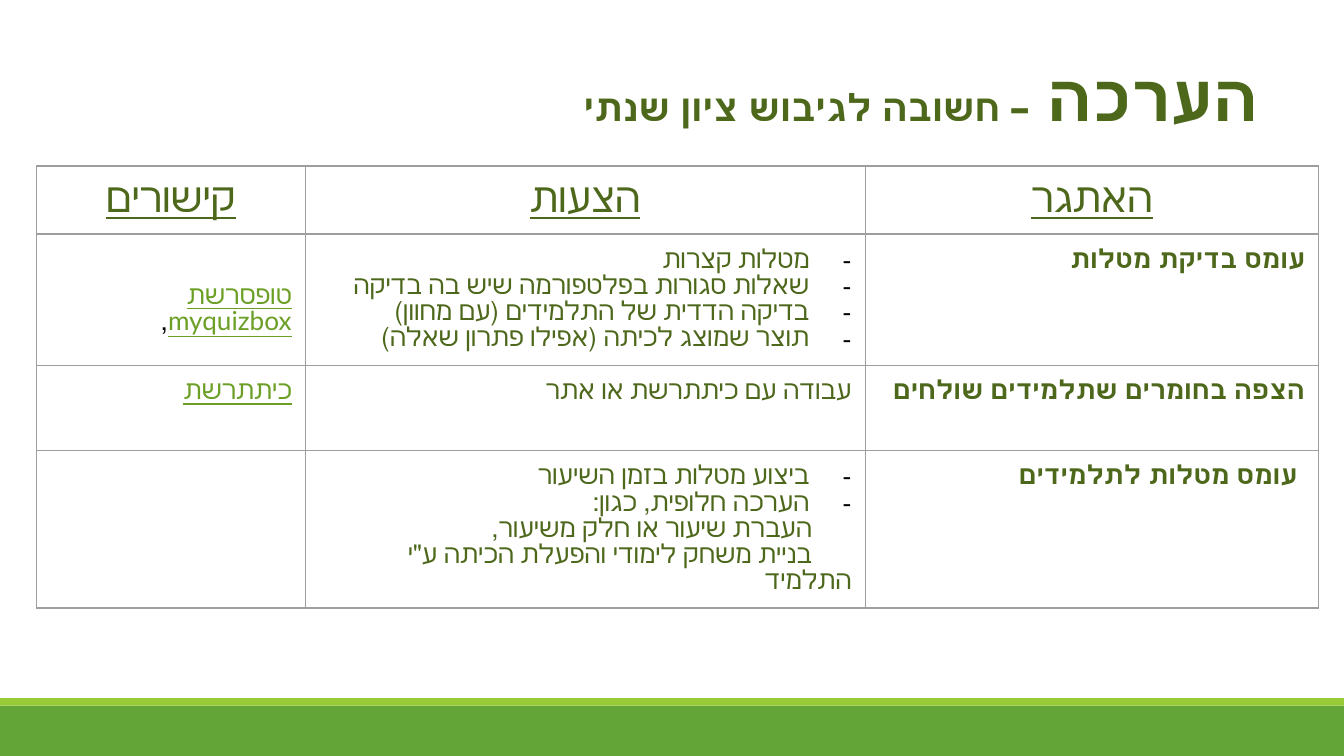
from lxml.etree import SubElement
from pptx import Presentation
from pptx.dml.color import RGBColor
from pptx.enum.shapes import MSO_SHAPE
from pptx.enum.text import MSO_ANCHOR, MSO_AUTO_SIZE, PP_ALIGN
from pptx.oxml.ns import qn
from pptx.util import Pt

COLORS = {
    "text": "4D671B",
    "link": "6B9F25",
    "black": "000000",
    "border": "9E9E9E",
    "footer": "63A537",
    "stripe": "99CB38",
}
FONT = "Lato"
INSET = 7.2
BULLET_INDENT = 22.5

TITLE = [("הערכה ", 35), ("– חשובה לגיבוש ציון שנתי", 20)]
HEADERS = ["קישורים", "הצעות", "האתגר"]
ROWS = [
    {
        "links": [("טופסרשת", "link"), (" ", "black"), ("myquizbox", "link"), (", ", "black")],
        "links_drop": 19.25,
        "ideas": [
            ("מטלות קצרות", "bullet"),
            ("שאלות סגורות בפלטפורמה שיש בה בדיקה", "bullet"),
            ("בדיקה הדדית של התלמידים (עם מחוון)", "bullet"),
            ("תוצר שמוצג לכיתה (אפילו פתרון שאלה)", "bullet"),
        ],
        "challenge": ("עומס בדיקת מטלות", "plain"),
    },
    {
        "links": [("כיתתרשת", "link")],
        "links_drop": 0,
        "ideas": [("עבודה עם כיתתרשת או אתר", "plain")],
        "challenge": ("הצפה בחומרים שתלמידים שולחים", "plain"),
    },
    {
        "links": [],
        "links_drop": 0,
        "ideas": [
            ("ביצוע מטלות בזמן השיעור", "bullet"),
            ("הערכה חלופית, כגון: ", "bullet"),
            ("העברת שיעור או חלק משיעור, ", "indented"),
            ("בניית משחק לימודי והפעלת הכיתה ע\"י התלמיד", "indented"),
        ],
        "challenge": ("עומס מטלות לתלמידים", "nudged"),
    },
]
INDENTS = {
    "plain": (0, 0),
    "bullet": (BULLET_INDENT, -BULLET_INDENT),
    "indented": (0, 21),
    "nudged": (0, 4),
}
COLUMN_WIDTHS = [144, 300, 243]
ROW_HEIGHTS = [36.5, 70.25, 45.5, 84.25]
BARS = [(378, 27, "footer"), (374, 4, "stripe")]


def color(name):
    return RGBColor.from_string(COLORS[name])


def add_span(para, text, size, color_name="text", bold=False, underline=False):
    span = para.add_run()
    span.text = text
    font = span.font
    font.name, font.size, font.bold, font.underline = FONT, Pt(size), bold, underline
    font.color.rgb = color(color_name)


def format_para(para, align=PP_ALIGN.RIGHT, style="plain", line=None):
    para.alignment = align
    para.space_before = para.space_after = Pt(0)
    para.line_spacing = Pt(line) if line else 1.0
    properties = para._p.get_or_add_pPr()
    margin, indent = INDENTS[style]
    properties.set("rtl", "1")
    properties.set("marL", str(Pt(margin)))
    properties.set("indent", str(Pt(indent)))
    if style == "bullet":
        bullet_color = SubElement(properties, qn("a:buClr"))
        SubElement(bullet_color, qn("a:srgbClr"), val=COLORS["black"])
        SubElement(properties, qn("a:buFont"), typeface=FONT)
        SubElement(properties, qn("a:buChar"), char="-")
    else:
        SubElement(properties, qn("a:buNone"))


def set_insets(box):
    box.margin_left = box.margin_right = Pt(INSET)
    box.margin_top = box.margin_bottom = Pt(INSET)


def format_cell(cell):
    set_insets(cell)
    cell.vertical_anchor = MSO_ANCHOR.TOP
    properties = cell._tc.get_or_add_tcPr()
    for side in ("lnL", "lnR", "lnT", "lnB"):
        border = SubElement(properties, qn(f"a:{side}"), w=str(Pt(0.75)))
        fill = SubElement(border, qn("a:solidFill"))
        SubElement(fill, qn("a:srgbClr"), val=COLORS["border"])
    cell.fill.background()


def add_bars(page, width):
    for top, height, name in BARS:
        bar = page.shapes.add_shape(MSO_SHAPE.RECTANGLE, 0, Pt(top), width, Pt(height))
        bar.shadow.inherit = False
        bar.fill.solid()
        bar.fill.fore_color.rgb = color(name)
        bar.line.fill.background()


def add_title(page):
    title = page.shapes.title
    title.left, title.top, title.width, title.height = Pt(108), Pt(23.25), Pt(573), Pt(56)
    frame = title.text_frame
    frame.word_wrap = True
    frame.auto_size = MSO_AUTO_SIZE.NONE
    frame.vertical_anchor = MSO_ANCHOR.BOTTOM
    set_insets(frame)
    para = frame.paragraphs[0]
    format_para(para)
    for text, size in TITLE:
        add_span(para, text, size, bold=True)


def add_challenge_table(page):
    holder = page.shapes.add_table(
        len(ROW_HEIGHTS), len(COLUMN_WIDTHS), Pt(19.5), Pt(88.9),
        Pt(sum(COLUMN_WIDTHS)), Pt(sum(ROW_HEIGHTS)),
    )
    table = holder.table
    table.first_row = table.horz_banding = False
    for column, width in zip(table.columns, COLUMN_WIDTHS):
        column.width = Pt(width)
    for row, height in zip(table.rows, ROW_HEIGHTS):
        row.height = Pt(height)
    for cell in table.iter_cells():
        format_cell(cell)

    for index, text in enumerate(HEADERS):
        para = table.cell(0, index).text_frame.paragraphs[0]
        format_para(para, PP_ALIGN.CENTER, line=22)
        add_span(para, text, 22, underline=True)

    for index, entry in enumerate(ROWS, 1):
        links, ideas, challenge = (table.cell(index, place) for place in range(3))
        links.margin_top = Pt(INSET + entry["links_drop"])
        para = links.text_frame.paragraphs[0]
        format_para(para, line=14)
        for text, name in entry["links"]:
            add_span(para, text, 14, name, underline=name == "link")

        frame = ideas.text_frame
        for number, (text, style) in enumerate(entry["ideas"]):
            para = frame.add_paragraph() if number else frame.paragraphs[0]
            format_para(para, style=style, line=14)
            add_span(para, text, 14)

        text, style = entry["challenge"]
        para = challenge.text_frame.paragraphs[0]
        format_para(para, style=style, line=14)
        add_span(para, text, 14, bold=True)


def main():
    deck = Presentation()
    deck.slide_width, deck.slide_height = Pt(720), Pt(405)
    page = deck.slides.add_slide(deck.slide_layouts[5])
    add_bars(page, deck.slide_width)
    add_challenge_table(page)
    add_title(page)
    deck.save("out.pptx")


if __name__ == "__main__":
    main()
